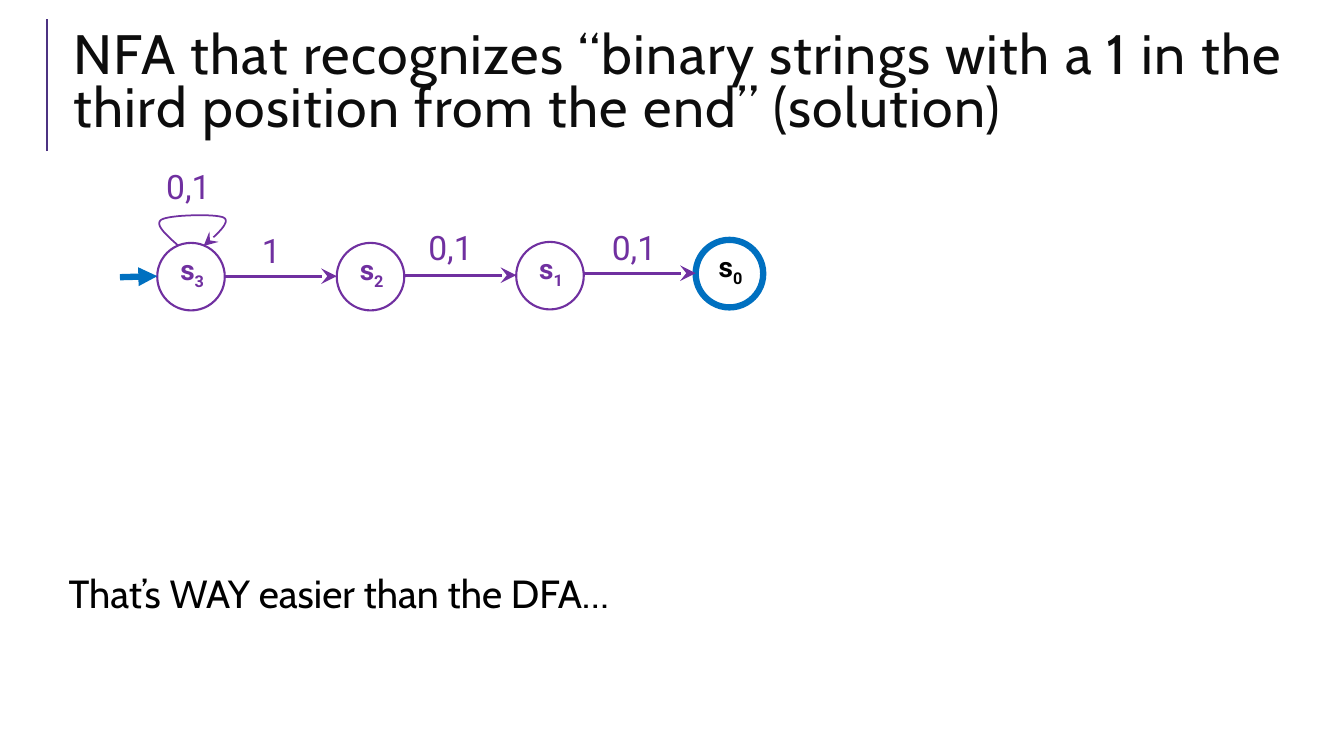
"""Build the slide with a nondeterministic automaton."""
from dataclasses import dataclass

from lxml.etree import SubElement
from pptx import Presentation
from pptx.dml.color import RGBColor
from pptx.enum.shapes import MSO_CONNECTOR, MSO_SHAPE
from pptx.enum.text import MSO_ANCHOR, MSO_AUTO_SIZE
from pptx.oxml.ns import qn
from pptx.util import Inches, Pt


@dataclass(frozen=True)
class Theme:
    """Colours, fonts and type sizes of the slide."""
    rule: str = "4C3282"
    title: str = "0D0D0D"
    body: str = "000000"
    purple: str = "7030A0"
    blue: str = "0070C0"
    prose_font: str = "Cabin"
    diagram_font: str = "Roboto"
    title_size: float = 39.6
    body_size: float = 28
    label_size: float = 24
    state_size: float = 20


THEME = Theme()
DIAMETER = 0.67
STEP = 1.78


def add_text(page, box, text, *, size, font, color, bold=False, subscript="",
             spacing=1.0, tracking=0, inset=0.1, wrap=False, anchor=MSO_ANCHOR.TOP):
    """Add one paragraph of text in the box (left, top, width, height)."""
    shape = page.shapes.add_textbox(*map(Inches, box))
    frame = shape.text_frame
    frame.word_wrap = wrap
    frame.auto_size = MSO_AUTO_SIZE.NONE if wrap else MSO_AUTO_SIZE.SHAPE_TO_FIT_TEXT
    frame.vertical_anchor = anchor
    frame.margin_left = frame.margin_right = Inches(inset)
    frame.margin_top = frame.margin_bottom = Inches(0.05)
    para = frame.paragraphs[0]
    para.line_spacing = spacing
    for content, baseline in ((text, 0), (subscript, -25000)):
        if not content:
            continue
        span = para.add_run()
        span.text = content
        span.font.size = Pt(size)
        span.font.name = font
        span.font.bold = bold
        span.font.color.rgb = RGBColor.from_string(color)
        properties = span._r.get_or_add_rPr()
        if baseline:
            properties.set("baseline", str(baseline))
        if tracking:
            properties.set("spc", str(tracking * 100))


def style_line(shape, color, width, arrowhead=None, arrow_size="lg"):
    """Set the line colour and width, with an optional arrowhead at its end."""
    shape.line.color.rgb = RGBColor.from_string(color)
    shape.line.width = Pt(width)
    if arrowhead:
        SubElement(shape.line._get_or_add_ln(), qn("a:tailEnd"),
                   type=arrowhead, w=arrow_size, len=arrow_size)


def add_line(page, start, end, color, width, arrowhead=None, arrow_size="lg"):
    """Add a straight connector without a shadow."""
    line = page.shapes.add_connector(MSO_CONNECTOR.STRAIGHT, *map(Inches, (*start, *end)))
    style_line(line, color, width, arrowhead, arrow_size)
    SubElement(line._element.spPr, qn("a:effectLst"))


def bezier_point(controls, t):
    """Return the point at t on a cubic curve."""
    weights = ((1 - t) ** 3, 3 * t * (1 - t) ** 2, 3 * t ** 2 * (1 - t), t ** 3)
    return tuple(sum(weight * point[axis] for weight, point in zip(weights, controls))
                 for axis in (0, 1))


def add_loop(page, left, top):
    """Draw the curved self-transition above a state's box corner."""
    offsets = ((0.21, 0.03), (0.09, -0.08), (-0.03, -0.18), (0.04, -0.23),
               (0.12, -0.28), (0.59, -0.29), (0.66, -0.25),
               (0.73, -0.21), (0.60, -0.09), (0.46, 0.03))
    controls = [(Inches(left + x), Inches(top + y)) for x, y in offsets]
    points = [bezier_point(controls[first:first + 4], part / 16)
              for first in (0, 3, 6) for part in range(1, 17)]
    builder = page.shapes.build_freeform(*controls[0])
    builder.add_line_segments(points, close=False)
    loop = builder.convert_to_shape()
    loop.fill.background()
    loop.shadow.inherit = False
    style_line(loop, THEME.purple, 1.25, "stealth")


def add_state(page, left, top, number, accepting):
    """Draw one state, with a heavy ring if it accepts."""
    add_text(page, (left + 0.13, top + 0.05, 0.44, 0.44), "s", subscript=number,
             size=THEME.state_size, font=THEME.diagram_font, bold=True,
             color=THEME.body if accepting else THEME.purple)
    circle = page.shapes.add_shape(
        MSO_SHAPE.OVAL, *map(Inches, (left, top, DIAMETER, DIAMETER)))
    circle.fill.background()
    circle.shadow.inherit = False
    style_line(circle, THEME.blue if accepting else THEME.purple, 4.5 if accepting else 1.5)


def add_label(page, left, top, text):
    """Write the symbols of a transition."""
    add_text(page, (left, top, 0.4 if len(text) == 1 else 0.68, 0.5), text,
             size=THEME.label_size, font=THEME.diagram_font, color=THEME.purple)


def add_title(page, left, top, width, height):
    """Write the title beside its vertical rule."""
    add_line(page, (left - 0.16, top + 1.21), (left - 0.16, top - 0.1), THEME.rule, 1.5)
    add_text(page, (left, top, width, height),
             "NFA that recognizes “binary strings with a 1 in the third position "
             "from the end” (solution)",
             size=THEME.title_size, font=THEME.prose_font, color=THEME.title,
             spacing=0.8, tracking=1, wrap=True, anchor=MSO_ANCHOR.MIDDLE)


def add_automaton(page, left, top):
    """Draw the chain of states from the start state's box corner."""
    drops = (0, 0, -0.01, -0.03)
    for index, drop in enumerate(drops):
        add_state(page, left + index * STEP, top + drop, str(3 - index), index == 3)
    add_line(page, (left - 0.37, top + 0.34), (left, top + 0.33), THEME.blue, 4.5,
             "triangle", "med")
    add_loop(page, left, top)
    add_label(page, left - 0.01, top - 0.81, "0,1")
    transitions = (("1", 0.27, -0.18), ("0,1", 0.14, -0.2), ("0,1", 0.18, -0.18))
    for index, (text, shift, rise) in enumerate(transitions):
        start = left + index * STEP + DIAMETER
        level = top + drops[index + 1]
        add_line(page, (start, level + 0.33), (left + (index + 1) * STEP, level + 0.33),
                 THEME.purple, 2.25, "stealth")
        add_label(page, start + shift, level + rise, text)


def add_remark(page, left, top, width, height):
    """Write the closing remark."""
    add_text(page, (left, top, width, height), "That’s WAY easier than the DFA…",
             size=THEME.body_size, font=THEME.prose_font, color=THEME.body,
             spacing=0.9, inset=0.05, wrap=True)


def main():
    """Build and save the deck."""
    deck = Presentation()
    deck.slide_width, deck.slide_height = Inches(13.33), Inches(7.5)
    page = deck.slides.add_slide(deck.slide_layouts[6])
    add_title(page, 0.63, 0.29, 12.23, 1.11)
    add_automaton(page, 1.56, 2.41)
    add_remark(page, 0.63, 5.65, 12.23, 0.6)
    deck.save("out.pptx")


if __name__ == "__main__":
    main()
